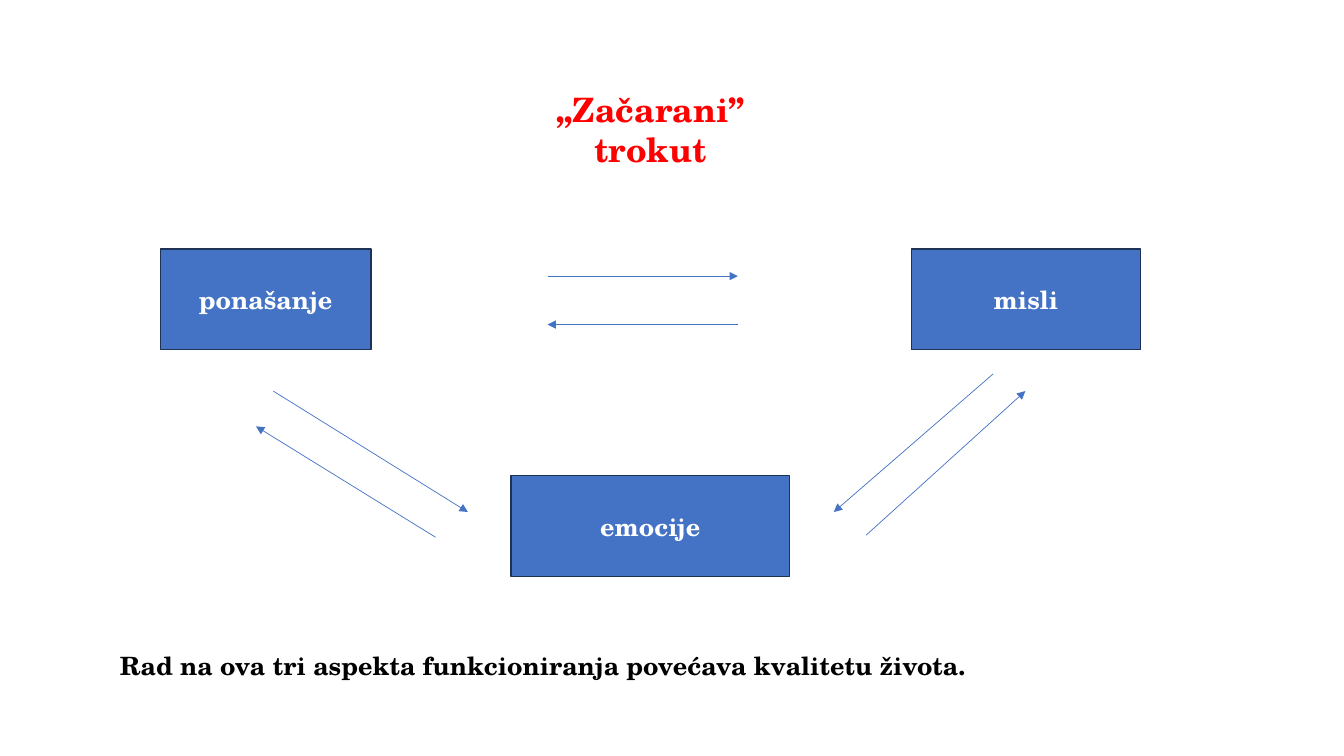
from lxml.etree import SubElement
from pptx import Presentation
from pptx.dml.color import RGBColor
from pptx.enum.shapes import MSO_CONNECTOR, MSO_SHAPE
from pptx.enum.text import MSO_ANCHOR, PP_ALIGN
from pptx.oxml import parse_xml
from pptx.oxml.ns import nsdecls, qn
from pptx.util import Inches, Pt

FONT = "TeX Gyre Schola"
COLORS = {"title": "FF0000", "box": "4472C4", "border": "1E3256",
          "label": "FFFFFF", "conclusion": "000000", "halo": "FFFFFF"}

# Positions are percentages of the slide's width and height.
BAND = 13.33
TITLE = ("„Začarani” trokut", 36.68, 10.4, 23.48)
CONCLUSION = ("Rad na ova tri aspekta funkcioniranja povećava kvalitetu života.",
              8.18, 79.33, 82.97)
ASPECTS = [
    ("ponašanje", 11.93, 32.93, 15.68),
    ("misli", 67.82, 32.93, 17.03),
    ("emocije", 38.03, 62.93, 20.71),
]
INFLUENCES = [
    ((54.91, 42.93), (40.74, 42.93)),
    ((40.74, 36.53), (54.91, 36.53)),
    ((73.89, 49.47), (62.04, 67.73)),
    ((64.44, 70.8), (76.29, 51.73)),
    ((20.33, 51.73), (34.81, 67.73)),
    ((32.41, 71.07), (19.05, 56.4)),
]

prs = Presentation()
prs.slide_width, prs.slide_height = Inches(13.33), Inches(7.5)
slide = prs.slides.add_slide(prs.slide_layouts[6])


def rgb(name):
    return RGBColor.from_string(COLORS[name])


def across(share):
    return round(prs.slide_width * share / 100)


def down(share):
    return round(prs.slide_height * share / 100)


def frame(left, top, width):
    return across(left), down(top), across(width), down(BAND)


def write(shape, text, size, color, align):
    body = shape.text_frame
    body.word_wrap = True
    body.vertical_anchor = MSO_ANCHOR.MIDDLE
    paragraph = body.paragraphs[0]
    paragraph.alignment = align
    run = paragraph.add_run()
    run.text = text
    run.font.name = FONT
    run.font.size = Pt(size)
    run.font.bold = True
    run.font.color.rgb = rgb(color)
    return run


text, *place = TITLE
title = slide.shapes.add_textbox(*frame(*place))
title_run = write(title, text, 24, "title", PP_ALIGN.CENTER)
title_run.font._element.insert(0, parse_xml(
    f'<a:ln {nsdecls("a")} w="{Pt(0.75)}"><a:solidFill>'
    f'<a:srgbClr val="{COLORS["halo"]}"/></a:solidFill></a:ln>'))

for text, *place in ASPECTS:
    box = slide.shapes.add_shape(MSO_SHAPE.RECTANGLE, *frame(*place))
    box.shadow.inherit = False
    box.fill.solid()
    box.fill.fore_color.rgb = rgb("box")
    box.line.color.rgb = rgb("border")
    box.line.width = Pt(1)
    write(box, text, 18, "label", PP_ALIGN.CENTER)

text, *place = CONCLUSION
conclusion = slide.shapes.add_textbox(*frame(*place))
write(conclusion, text, 18, "conclusion", PP_ALIGN.LEFT)
conclusion.text_frame.margin_top = down(4.67)

for (x1, y1), (x2, y2) in INFLUENCES:
    arrow = slide.shapes.add_connector(
        MSO_CONNECTOR.STRAIGHT, across(x1), down(y1), across(x2), down(y2))
    arrow.line.color.rgb = rgb("box")
    arrow.line.width = Pt(0.5)
    SubElement(arrow.line._get_or_add_ln(), qn("a:tailEnd"), type="triangle")
    SubElement(arrow._element.spPr, qn("a:effectLst"))

prs.save("out.pptx")
